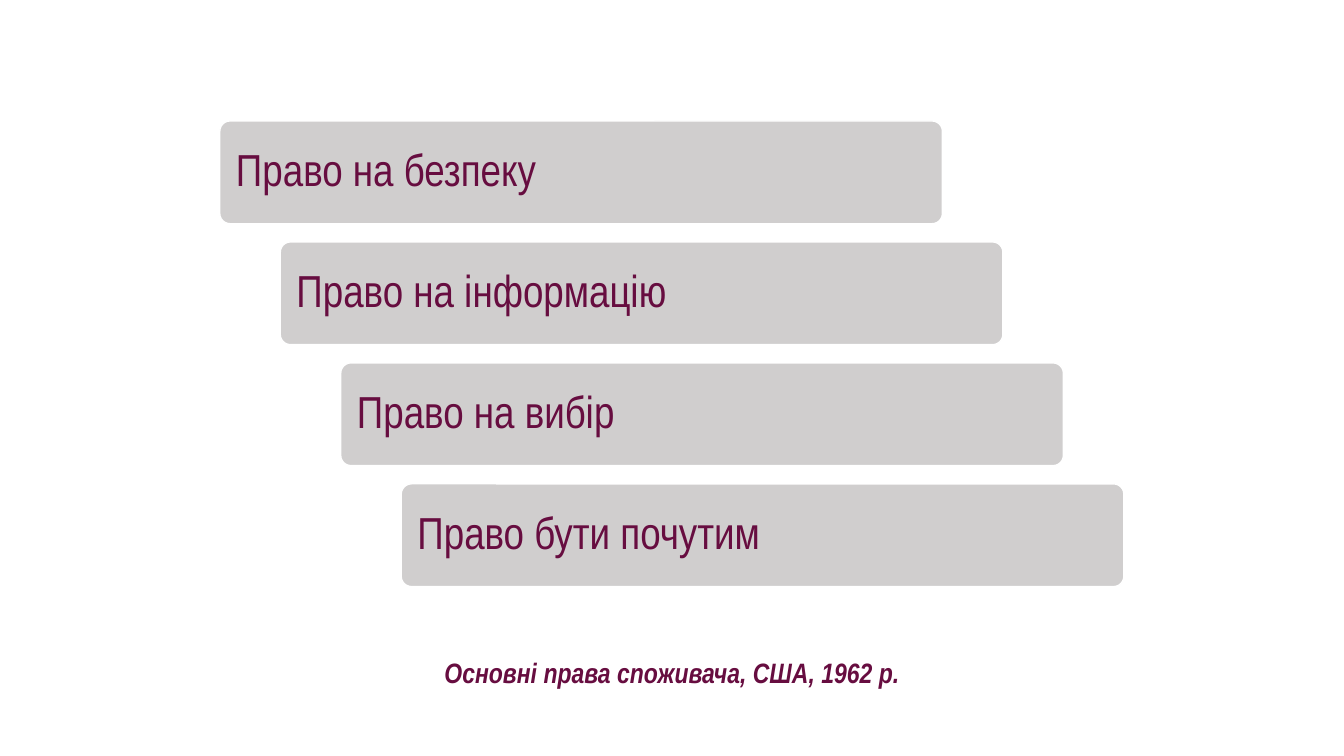
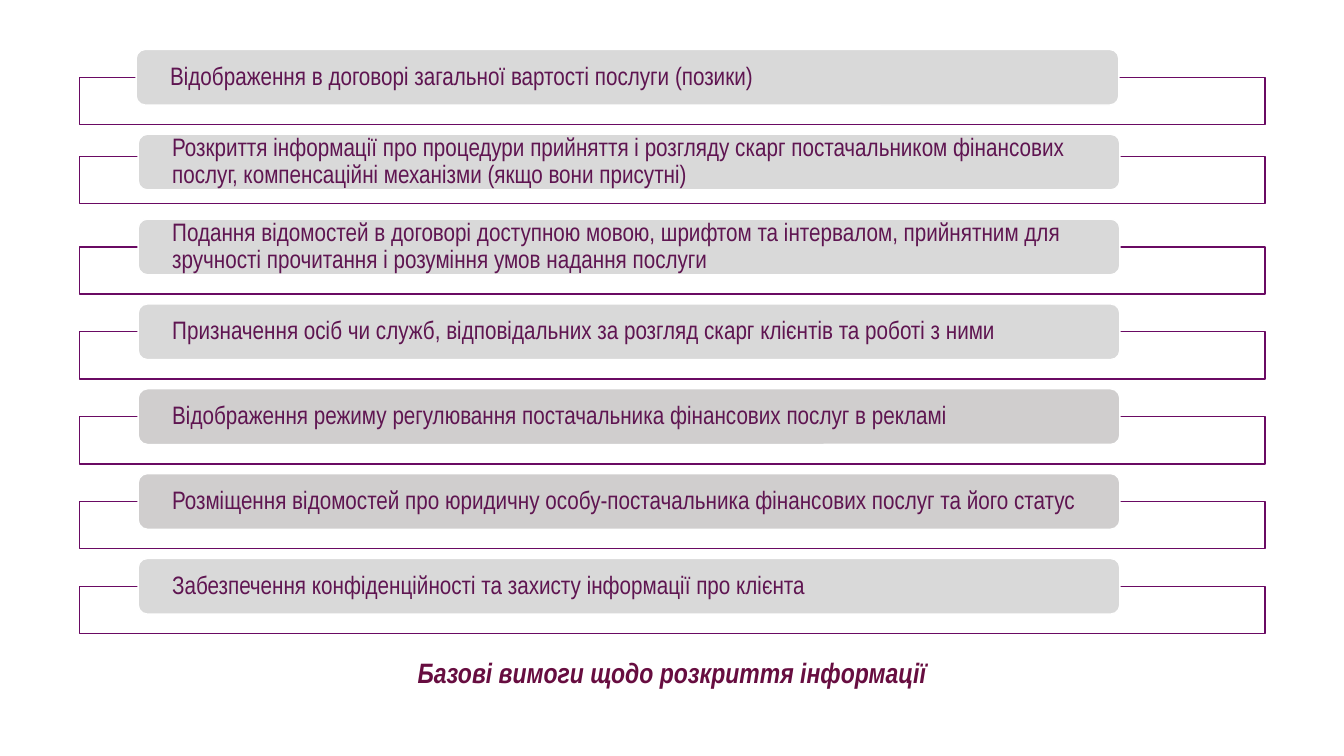
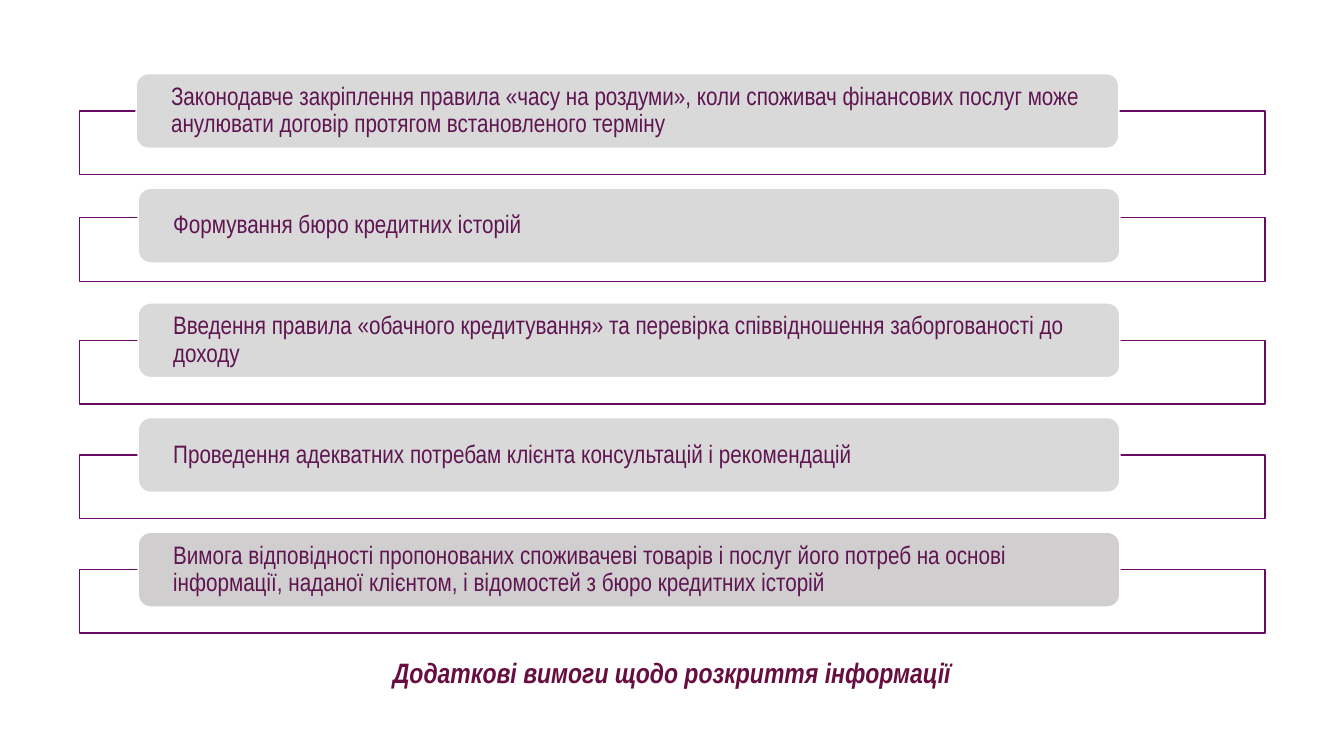
from lxml.etree import SubElement
from pptx import Presentation
from pptx.dml.color import RGBColor
from pptx.enum.shapes import MSO_SHAPE as Preset
from pptx.enum.text import MSO_ANCHOR as Anchor, MSO_AUTO_SIZE as AutoSize, PP_ALIGN as Align
from pptx.oxml.ns import qn
from pptx.util import Pt

WHITE = RGBColor(0xFF, 0xFF, 0xFF)
LIGHT_GREY = RGBColor(0xD9, 0xD9, 0xD9)
WARM_GREY = RGBColor(0xD0, 0xCE, 0xCE)
WINE = RGBColor(0x67, 0x0D, 0x40)
PLUM = RGBColor(0x5F, 0x15, 0x51)
PURPLE = RGBColor(0x6A, 0x0A, 0x63)

FONT = "Arial Narrow"
SLIDE_WIDTH, SLIDE_HEIGHT = 960, 540

RIGHTS = [
    "Право на безпеку",
    "Право на інформацію",
    "Право на вибір",
    "Право бути почутим",
]

BASIC_RULES = [
    ("Відображення в договорі загальної вартості послуги (позики)", LIGHT_GREY),
    ("Розкриття інформації про процедури прийняття і розгляду скарг постачальником "
     "фінансових послуг, компенсаційні механізми (якщо вони присутні)", LIGHT_GREY),
    ("Подання відомостей в договорі доступною мовою, шрифтом та інтервалом, "
     "прийнятним для зручності прочитання і розуміння умов надання послуги", LIGHT_GREY),
    ("Призначення осіб чи служб, відповідальних за розгляд скарг клієнтів "
     "та роботі з ними", LIGHT_GREY),
    ("Відображення режиму регулювання постачальника фінансових послуг в рекламі", WARM_GREY),
    ("Розміщення відомостей про юридичну особу-постачальника фінансових послуг "
     "та його статус", WARM_GREY),
    ("Забезпечення конфіденційності та захисту інформації про клієнта", LIGHT_GREY),
]

EXTRA_RULES = [
    ("Законодавче закріплення правила «часу на роздуми», коли споживач фінансових "
     "послуг може анулювати договір протягом встановленого терміну", LIGHT_GREY),
    ("Формування бюро кредитних історій", LIGHT_GREY),
    ("Введення правила «обачного кредитування» та перевірка співвідношення "
     "заборгованості до доходу", LIGHT_GREY),
    ("Проведення адекватних потребам клієнта консультацій і рекомендацій", LIGHT_GREY),
    ("Вимога відповідності пропонованих споживачеві товарів і послуг його потреб "
     "на основі інформації, наданої клієнтом, і відомостей з бюро кредитних історій",
     WARM_GREY),
]


def add_box(page, preset, left, top, width, height, fill, line=None):
    box = page.shapes.add_shape(preset, Pt(left), Pt(top), Pt(width), Pt(height))
    box.shadow.inherit = False
    box.fill.solid()
    box.fill.fore_color.rgb = fill
    if line is None:
        box.line.fill.background()
    else:
        box.line.color.rgb = line
        box.line.width = Pt(1)
    return box


def write(box, text, size, color, align=Align.LEFT, spacing=1.0, strong=False):
    frame = box.text_frame
    frame.word_wrap = True
    para = frame.paragraphs[0]
    para.alignment = align
    para.line_spacing = spacing
    span = para.add_run()
    span.text = text
    font = span.font
    font.name = FONT
    font.size = Pt(size)
    font.color.rgb = color
    font.bold = font.italic = strong


def add_pill(page, left, top, width, height, fill, text, size, color, inset_x, inset_y):
    pill = add_box(page, Preset.ROUNDED_RECTANGLE, left, top, width, height, fill, WHITE)
    frame = pill.text_frame
    frame.margin_left = frame.margin_right = Pt(inset_x)
    frame.margin_top = frame.margin_bottom = Pt(inset_y)
    frame.vertical_anchor = Anchor.MIDDLE
    write(pill, text, size, color, spacing=0.9)
    return pill


def add_frame(page, top, height):
    frame = add_box(page, Preset.RECTANGLE, 56.9, top, 846.7, height, WHITE, PURPLE)
    color = frame.fill._xPr.find(qn("a:solidFill"))[0]
    SubElement(color, qn("a:alpha")).set("val", "90000")


def add_caption(page, text):
    caption = add_box(page, Preset.RECTANGLE, 0, 464.4, SLIDE_WIDTH, 31.5, WHITE)
    caption.text_frame.vertical_anchor = Anchor.TOP
    caption.text_frame.auto_size = AutoSize.SHAPE_TO_FIT_TEXT
    write(caption, text, 20, WINE, align=Align.CENTER, strong=True)


def add_staircase(page, rights):
    for step, text in enumerate(rights):
        pill = add_pill(page, 157 + 43.2 * step, 86.4 + 86.4 * step, 516.2, 73.4,
                        WARM_GREY, text, 32, WINE, 9.4, 9.4)
        pill.adjustments[0] = 0.1


def add_rule_list(page, rules, first_top, pitch, pill_height, frame_height, second_lift):
    for row, (text, fill) in enumerate(rules):
        top = first_top + pitch * row
        lift = second_lift if row == 1 else 0
        left, width = (97.2, 702) if row == 0 else (98.7, 701.2)
        add_frame(page, top + pill_height / 2 - lift, frame_height)
        add_pill(page, left, top, width, pill_height, fill, text, 18, PLUM, 22.4, 0)


def main():
    deck = Presentation()
    deck.slide_width, deck.slide_height = Pt(SLIDE_WIDTH), Pt(SLIDE_HEIGHT)
    captions = [
        "Основні права споживача, США, 1962 р.",
        "Базові вимоги щодо розкриття інформації",
        "Додаткові вимоги щодо розкриття інформації",
    ]
    pages = [deck.slides.add_slide(deck.slide_layouts[6]) for _ in captions]
    rights_page, basic_page, extra_page = pages

    add_staircase(rights_page, RIGHTS)
    add_rule_list(basic_page, BASIC_RULES, 35.3, 60.6, 39.8, 33.8, 4.2)
    add_rule_list(extra_page, EXTRA_RULES, 52.6, 81.9, 53.4, 45.4, 5.6)
    for page, caption in zip(pages, captions):
        add_caption(page, caption)
    deck.save("out.pptx")


if __name__ == "__main__":
    main()
